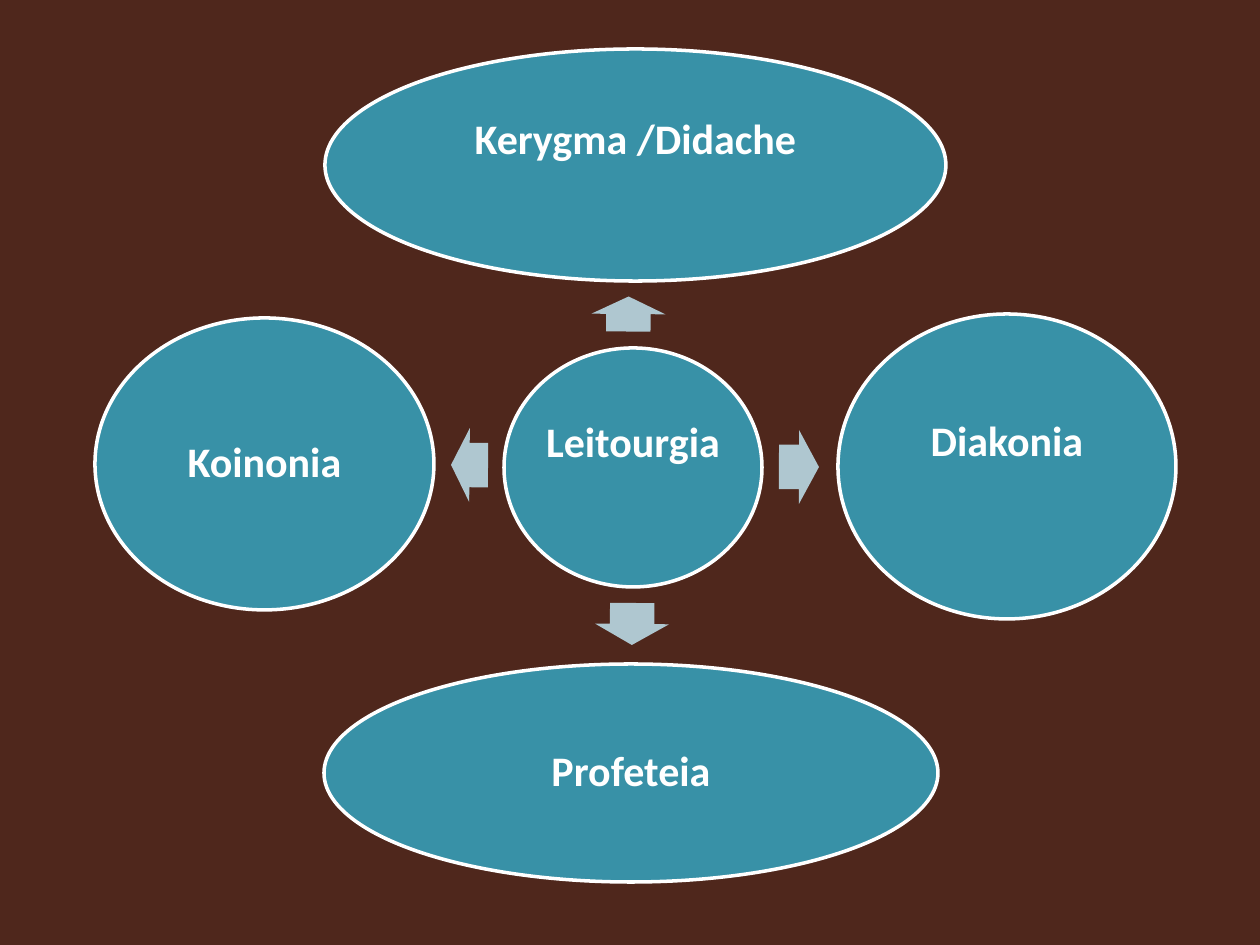
from pptx import Presentation
from pptx import util as u
from pptx.dml.color import RGBColor
from pptx.enum import shapes, text

PX = u.Inches(1) // 126
THEME = {
    "background": RGBColor.from_string("4F271C"),
    "ellipse": RGBColor.from_string("3891A7"),
    "arrow": RGBColor.from_string("AFC7D0"),
    "light": RGBColor.from_string("FFFFFF"),
    "font": "Calibri",
    "size": u.Pt(24),
    "outline": u.Pt(2),
}

prs = Presentation()
prs.slide_width, prs.slide_height = 1260 * PX, 945 * PX
s = prs.slides.add_slide(prs.slide_layouts[6])
s.background.fill.solid()
s.background.fill.fore_color.rgb = THEME["background"]


def add_filled(kind, box, color):
    sp = s.shapes.add_shape(kind, *(v * PX for v in box))
    sp.shadow.inherit = False
    sp.fill.solid()
    sp.fill.fore_color.rgb = color
    return sp


# Ellipses: label, box, and how far the label sits above the middle
ellipses = [
    ("Leitourgia", (504, 348, 258, 239), 24),
    ("Kerygma /Didache", (325, 49, 621, 232), 24),
    ("Diakonia", (838, 314, 338, 305), 24),
    ("Profeteia", (324, 664, 614, 218), 0),
    ("Koinonia", (95, 318, 339, 292), 0),
]
for label, box, lift in ellipses:
    sp = add_filled(shapes.MSO_SHAPE.OVAL, box, THEME["ellipse"])
    sp.line.color.rgb = THEME["light"]
    sp.line.width = THEME["outline"]
    tf = sp.text_frame
    tf.word_wrap = False
    tf.vertical_anchor = text.MSO_ANCHOR.MIDDLE
    tf.margin_left = tf.margin_right = tf.margin_top = 4 * PX
    tf.margin_bottom = (4 + 2 * lift) * PX
    p = tf.paragraphs[0]
    p.text = label
    p.alignment = text.PP_ALIGN.CENTER
    p.line_spacing = 0.9
    p.font.name = THEME["font"]
    p.font.size = THEME["size"]
    p.font.bold = True
    p.font.color.rgb = THEME["light"]

# Arrows pointing outward from the centre: box before rotation, angle
arrows = [
    ((611, 277, 35, 74), 270.5),
    ((779, 430, 40, 74), 0.1),
    ((611, 587, 42, 74), 90.5),
    ((451, 428, 37, 74), 180.5),
]
for box, angle in arrows:
    sp = add_filled(shapes.MSO_SHAPE.RIGHT_ARROW, box, THEME["arrow"])
    sp.line.fill.background()
    sp.adjustments[0], sp.adjustments[1] = 0.6, 0.5
    sp.rotation = angle

prs.save("out.pptx")
